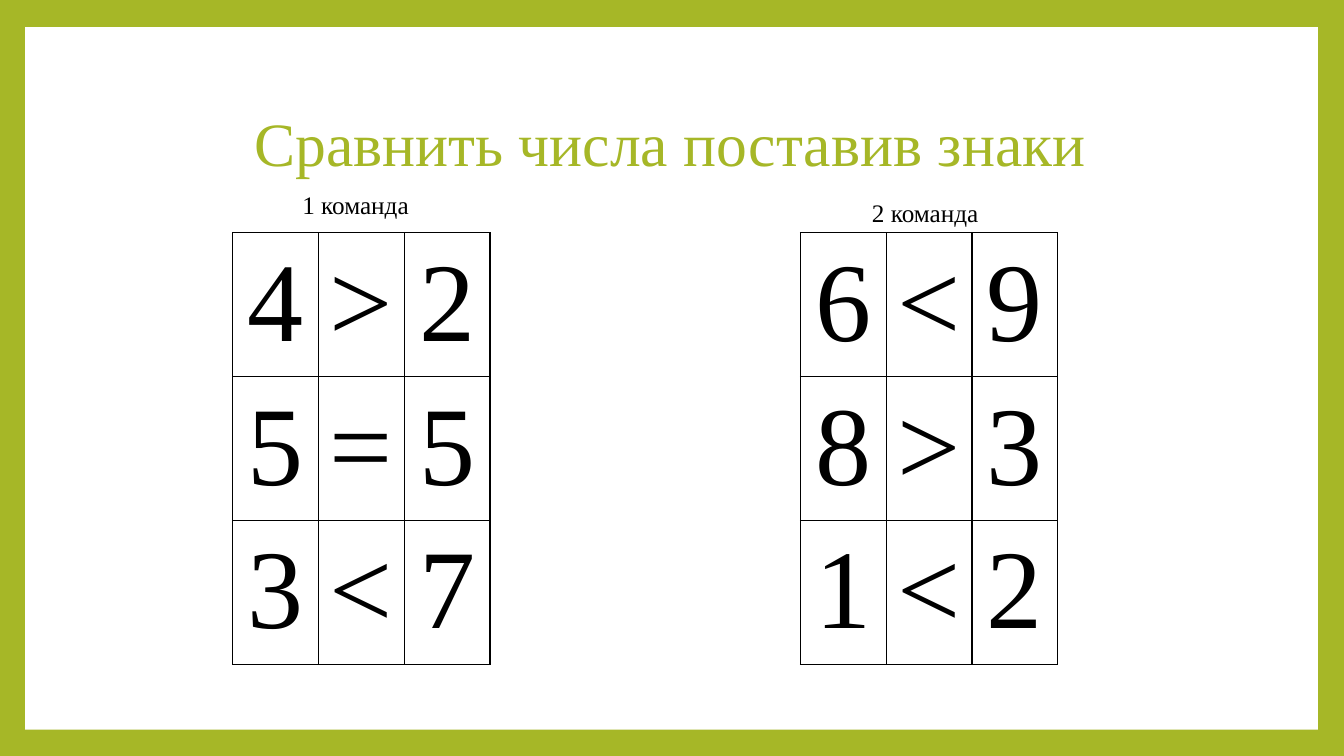
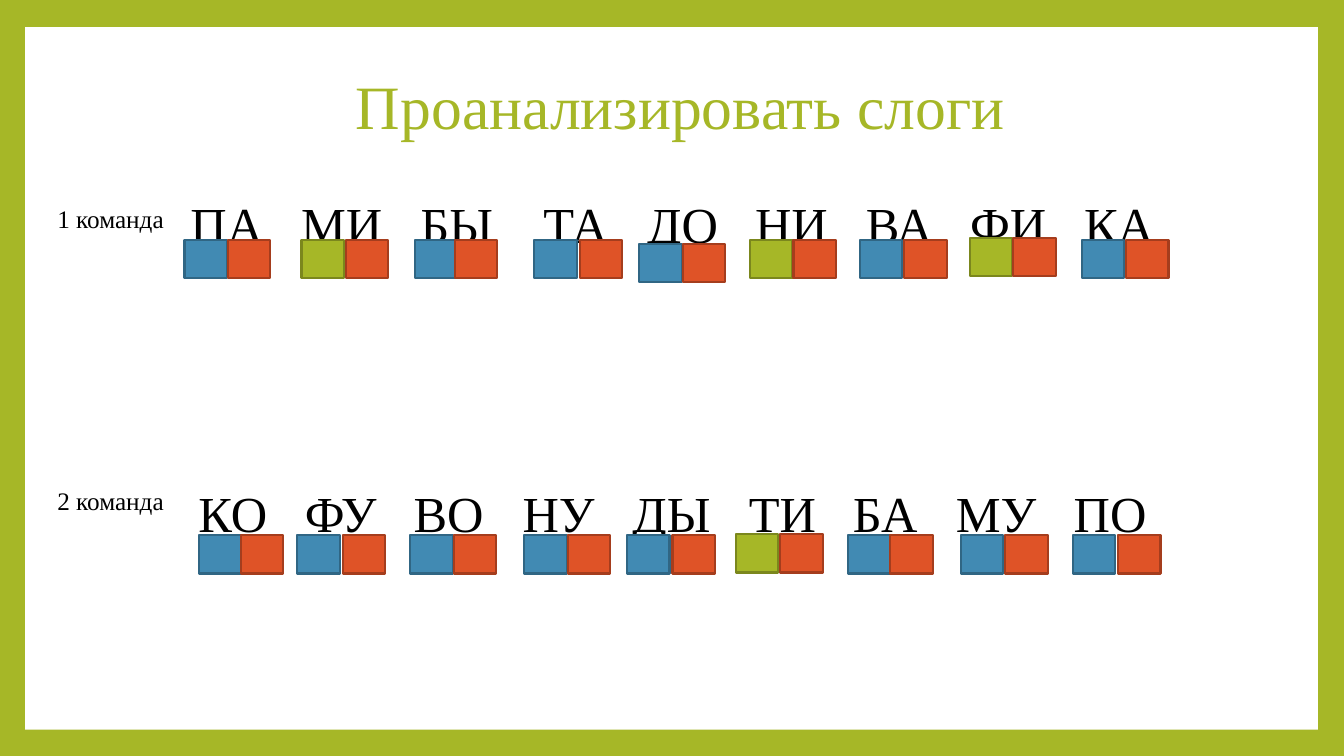
"""Build two classroom slides: comparing numbers and analysing syllables."""
from lxml import etree
from pptx import Presentation
from pptx.dml.color import RGBColor
from pptx.enum.shapes import MSO_SHAPE
from pptx.enum.text import MSO_ANCHOR, PP_ALIGN
from pptx.oxml.ns import qn
from pptx.util import Emu, Pt

RECT = MSO_SHAPE.RECTANGLE
CENTER, LEFT = PP_ALIGN.CENTER, PP_ALIGN.LEFT
TOP, MIDDLE = MSO_ANCHOR.TOP, MSO_ANCHOR.MIDDLE
PX = 9144
WIDTH, HEIGHT = 1333, 750


class Theme:
    """Colours, font and type sizes."""
    font = "Times New Roman"
    green, white, black = "A6B727", "FFFFFF", "000000"
    hard = ("418AB3", "306684")
    soft = ("A6B727", "7B871D")
    vowel = ("DF5327", "A53D1D")
    title, label, syllable, digit = 44, 18, 36, 80


def px(n):
    """Turn px into EMU."""
    return Emu(n * PX)


def rgb(value):
    """Turn a hex string into a colour."""
    return RGBColor.from_string(value)


class Deck:
    """Holds the style and the current slide."""

    def __init__(self, theme):
        self.theme = theme
        self.prs = Presentation()
        self.prs.slide_width, self.prs.slide_height = px(WIDTH), px(HEIGHT)
        self.s = None

    def slide(self, title, x, y):
        """Start a framed slide with its title."""
        self.s = self.prs.slides.add_slide(self.prs.slide_layouts[6])
        fill = self.s.background.fill
        fill.solid()
        fill.fore_color.rgb = rgb(self.theme.green)
        self.rect(25, 27, 1282, 697, self.theme.white)
        self.text(title, x, y, 1080, 148, self.theme.title,
                  self.theme.green, CENTER, MIDDLE)

    def rect(self, x, y, w, h, fill, line=None):
        """Add a filled rectangle with an optional outline."""
        sp = self.s.shapes.add_shape(RECT, px(x), px(y), px(w), px(h))
        sp.shadow.inherit = False
        sp.fill.solid()
        sp.fill.fore_color.rgb = rgb(fill)
        if line:
            sp.line.color.rgb = rgb(line)
            sp.line.width = Pt(1.5)
        else:
            sp.line.fill.background()

    def style(self, p, size, color, align):
        """Format one paragraph."""
        p.alignment = align
        for r in p.runs:
            r.font.name = self.theme.font
            r.font.size = Pt(size)
            r.font.color.rgb = rgb(color)

    def text(self, text, x, y, w, h, size, color, align=LEFT, anchor=TOP):
        """Add a text box."""
        tf = self.s.shapes.add_textbox(px(x), px(y), px(w), px(h)).text_frame
        tf.word_wrap = True
        tf.vertical_anchor = anchor
        tf.text = text
        self.style(tf.paragraphs[0], size, color, align)
        return tf

    def label(self, text, x, y):
        """Add a team label."""
        self.text(text, x, y, 135, 40, self.theme.label, self.theme.black)

    def syllable(self, text, center, y):
        """Add a syllable centred on a point."""
        tf = self.text(text, center - 60, y, 120, 57, self.theme.syllable,
                       self.theme.black, CENTER)
        tf.margin_top = tf.margin_bottom = 0

    def tile(self, x, y, colors):
        """Add a sound tile."""
        self.rect(x, y, 42, 38, *colors)

    def table(self, rows, x, y, col_w, row_h):
        """Add a bordered grid of large characters."""
        cols = len(rows[0])
        tbl = self.s.shapes.add_table(len(rows), cols, px(x), px(y),
                                      px(col_w * cols), px(row_h * len(rows))).table
        tbl.first_row = tbl.horz_banding = False
        for i, row in enumerate(rows):
            tbl.rows[i].height = px(row_h)
            for j, char in enumerate(row):
                self.cell(tbl.cell(i, j), char)

    def cell(self, cell, char):
        """Fill and format one table cell."""
        cell.margin_left = cell.margin_right = px(7)
        cell.margin_top = cell.margin_bottom = 0
        cell.text = char
        p = cell.text_frame.paragraphs[0]
        p.line_spacing = 1.07
        self.style(p, self.theme.digit, self.theme.black, CENTER)
        tc_pr = cell._tc.get_or_add_tcPr()
        for side in ("a:lnL", "a:lnR", "a:lnT", "a:lnB"):
            ln = etree.SubElement(tc_pr, qn(side), w=str(Pt(1)))
            fill = etree.SubElement(ln, qn("a:solidFill"))
            etree.SubElement(fill, qn("a:srgbClr"), val=self.theme.black)
        cell.fill.background()


COMPARISONS = [
    ("1 команда", 290, 183, 231, ("4>2", "5=5", "3<7")),
    ("2 команда", 855, 191, 794, ("6<9", "8>3", "1<2")),
]

# Each syllable: text, centre, left of both tiles, vertical tile shift.
SYLLABLES = [
    ("1 команда", 197, 192, 238, [
        ("ПА", 225, 183, 226, 0), ("МИ", 339, 299, 343, 0),
        ("БЫ", 453, 412, 451, 0), ("ТА", 571, 530, 575, 0),
        ("ДО", 677, 634, 677, 4), ("НИ", 785, 744, 787, 0),
        ("ВА", 892, 853, 897, 0), ("ФИ", 1000, 962, 1005, -2),
        ("КА", 1110, 1073, 1117, 0)]),
    ("2 команда", 477, 478, 531, [
        ("КО", 231, 197, 239, 0), ("ФУ", 338, 295, 340, 0),
        ("ВО", 445, 407, 450, 0), ("НУ", 554, 520, 563, 0),
        ("ДЫ", 666, 622, 667, 0), ("ТИ", 776, 730, 774, -1),
        ("БА", 878, 841, 883, 0), ("МУ", 988, 953, 997, 0),
        ("ПО", 1101, 1064, 1109, 0)]),
]


def main():
    """Build and save the deck."""
    deck = Deck(Theme)

    deck.slide("Сравнить числа поставив знаки", 125, 67)
    for team, x, y, table_x, rows in COMPARISONS:
        deck.table(rows, table_x, 231, 85, 131)
        deck.label(team, x, y)

    deck.slide("Проанализировать слоги", 135, 30)
    for team, label_y, text_y, tile_y, syllables in SYLLABLES:
        deck.label(team, 47, label_y)
        for text, center, first_x, second_x, shift in syllables:
            consonant = Theme.soft if text.endswith("И") else Theme.hard
            deck.syllable(text, center, text_y)
            deck.tile(first_x, tile_y + shift, consonant)
            deck.tile(second_x, tile_y + shift, Theme.vowel)

    deck.prs.save("out.pptx")


if __name__ == "__main__":
    main()
